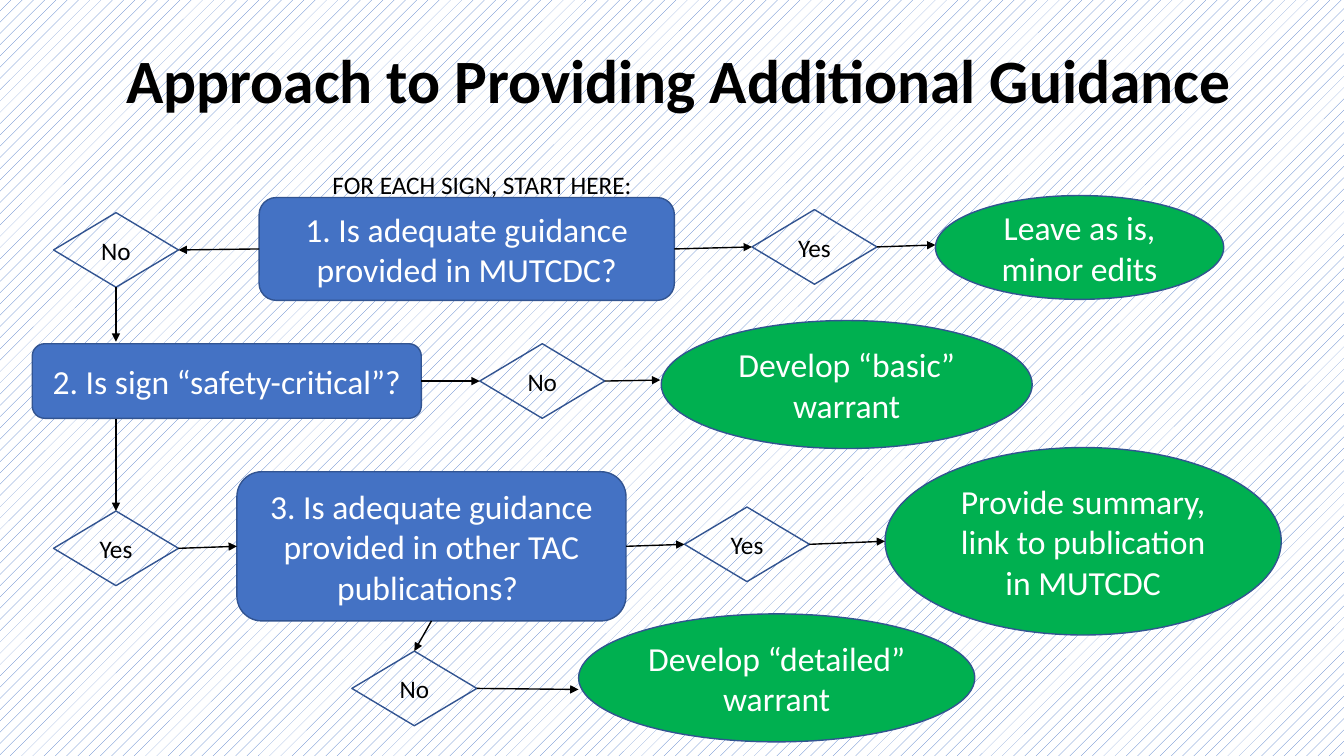
"""Flowchart slide: how to decide on additional guidance for each sign."""
import pptx
import pptx.util
import pptx.dml.color
import pptx.enum.dml
import pptx.enum.shapes
import pptx.enum.text
import pptx.oxml
import pptx.oxml.ns

RGBColor = pptx.dml.color.RGBColor
BLUE = RGBColor(0x44, 0x72, 0xC4)
OUTLINE = RGBColor(0x32, 0x54, 0x91)
GREEN = RGBColor(0x00, 0xB0, 0x50)
BLACK = RGBColor(0, 0, 0)
WHITE = RGBColor(0xFF, 0xFF, 0xFF)

Shape = pptx.enum.shapes.MSO_SHAPE
Align = pptx.enum.text.PP_ALIGN
Anchor = pptx.enum.text.MSO_ANCHOR
AutoSize = pptx.enum.text.MSO_AUTO_SIZE
TOP, LEFT, BOTTOM, RIGHT = range(4)

deck = pptx.Presentation()
deck.slide_width = pptx.util.Inches(13.33)
deck.slide_height = pptx.util.Inches(7.5)
COLUMN = deck.slide_width / 100
ROW = deck.slide_height / 100


def on_grid(*lengths):
    """Turn alternating columns and rows into slide lengths."""
    return [round(n * (ROW if i % 2 else COLUMN)) for i, n in enumerate(lengths)]


def write(holder, words, align, color, frame_format, font_format):
    """Put one formatted paragraph into a shape."""
    frame = holder.text_frame
    frame.text = words
    paragraph = frame.paragraphs[0]
    paragraph.alignment = align
    for name, value in frame_format.items():
        setattr(frame, name, value)
    for name, value in {"name": "Calibri", **font_format}.items():
        setattr(paragraph.font, name, value)
    paragraph.font.color.rgb = color
    return paragraph


slide = deck.slides.add_slide(deck.slide_layouts[5])
hatching = slide.background.fill
hatching.patterned()
hatching.pattern = pptx.enum.dml.MSO_PATTERN.PERCENT_10
hatching.fore_color.rgb = BLUE
hatching.back_color.rgb = WHITE

heading = slide.shapes.title
heading.left, heading.top, heading.width, heading.height = on_grid(8.63, 1.33, 86.25, 19.33)
heading_line = write(
    heading, "Approach to Providing Additional Guidance", Align.LEFT, BLACK,
    {"vertical_anchor": Anchor.MIDDLE, "word_wrap": True, "auto_size": AutoSize.NONE},
    {"size": pptx.util.Pt(44), "bold": True})
heading_line.line_spacing = 0.9

STYLES = {
    "question": (Shape.FLOWCHART_ALTERNATE_PROCESS, BLUE, WHITE, 24),
    "answer": (Shape.FLOWCHART_DECISION, None, BLACK, 18),
    "outcome": (Shape.FLOWCHART_CONNECTOR, GREEN, WHITE, 24),
}
ANSWER_SIZE = (9.3, 9.87)
STEPS = {
    "in manual": ("question", "1. Is adequate guidance provided in MUTCDC?", 19.28, 26.13, 30.9, 13.6),
    "not in manual": ("answer", "No", 3.98, 28.13, *ANSWER_SIZE),
    "yes in manual": ("answer", "Yes", 55.95, 27.73, *ANSWER_SIZE),
    "critical": ("question", "2. Is sign “safety-critical”?", 2.4, 45.47, 28.95, 9.87),
    "not critical": ("answer", "No", 35.7, 45.47, *ANSWER_SIZE),
    "yes critical": ("answer", "Yes", 3.98, 67.6, *ANSWER_SIZE),
    "elsewhere": ("question", "3. Is adequate guidance provided in other TAC publications? ",
                  17.63, 62.4, 28.95, 19.73),
    "yes elsewhere": ("answer", "Yes", 50.93, 67.07, *ANSWER_SIZE),
    "not elsewhere": ("answer", "No", 26.18, 86.13, *ANSWER_SIZE),
    "leave": ("outcome", "Leave as is, minor edits", 69.6, 25.87, 21.45, 13.73),
    "basic": ("outcome", "Develop “basic” warrant", 49.2, 42.4, 27.6, 16.93),
    "detailed": ("outcome", "Develop “detailed” warrant", 43.05, 81.2, 29.48, 16.93),
    "summary": ("outcome", "Provide summary, link to publication in MUTCDC", 65.85, 59.2, 29.48, 24.8),
}
steps = {}
for key, (role, words, *place) in STEPS.items():
    outline_shape, fill, ink, size = STYLES[role]
    step = steps[key] = slide.shapes.add_shape(outline_shape, *on_grid(*place))
    step.shadow.inherit = False
    if fill is None:
        step.fill.background()
    else:
        step.fill.solid()
        step.fill.fore_color.rgb = fill
    step.line.color.rgb = OUTLINE
    step.line.width = pptx.util.Pt(1)
    write(step, words, Align.CENTER, ink,
          {"vertical_anchor": Anchor.MIDDLE, "word_wrap": True},
          {"size": pptx.util.Pt(size)})

ARROWS = [
    (("in manual", LEFT), ("not in manual", RIGHT)),
    (("in manual", RIGHT), ("yes in manual", LEFT)),
    (("yes in manual", RIGHT), (69.6, 32.4)),
    (("not in manual", BOTTOM), (8.63, 45.2)),
    (("critical", RIGHT), ("not critical", LEFT)),
    (("not critical", RIGHT), (49.13, 50.27)),
    ((8.63, 55.47), ("yes critical", TOP)),
    (("yes critical", RIGHT), ("elsewhere", LEFT)),
    (("elsewhere", RIGHT), ("yes elsewhere", LEFT)),
    (("yes elsewhere", RIGHT), (65.85, 71.6)),
    (("elsewhere", BOTTOM), ("not elsewhere", TOP)),
    (("not elsewhere", RIGHT), (43.05, 91.2)),
]
for ends in ARROWS:
    points = [(0, 0) if end[0] in steps else on_grid(*end) for end in ends]
    arrow = slide.shapes.add_connector(
        pptx.enum.shapes.MSO_CONNECTOR.STRAIGHT, *points[0], *points[1])
    for join, (key, site) in zip((arrow.begin_connect, arrow.end_connect), ends):
        if key in steps:
            join(steps[key], site)
    arrow.line.color.rgb = BLACK
    arrow.line.width = pptx.util.Pt(1)
    head = pptx.oxml.parse_xml(
        f'<a:tailEnd {pptx.oxml.ns.nsdecls("a")} type="triangle"/>')
    arrow.line._get_or_add_ln().append(head)
    arrow._element.spPr.append(
        pptx.oxml.parse_xml(f'<a:effectLst {pptx.oxml.ns.nsdecls("a")}/>'))

start_label = slide.shapes.add_textbox(*on_grid(24, 21.73, 24, 5.33))
write(start_label, "FOR EACH SIGN, START HERE:", Align.LEFT, BLACK,
      {"word_wrap": False, "auto_size": AutoSize.SHAPE_TO_FIT_TEXT},
      {"size": pptx.util.Pt(18)})

deck.save("out.pptx")
